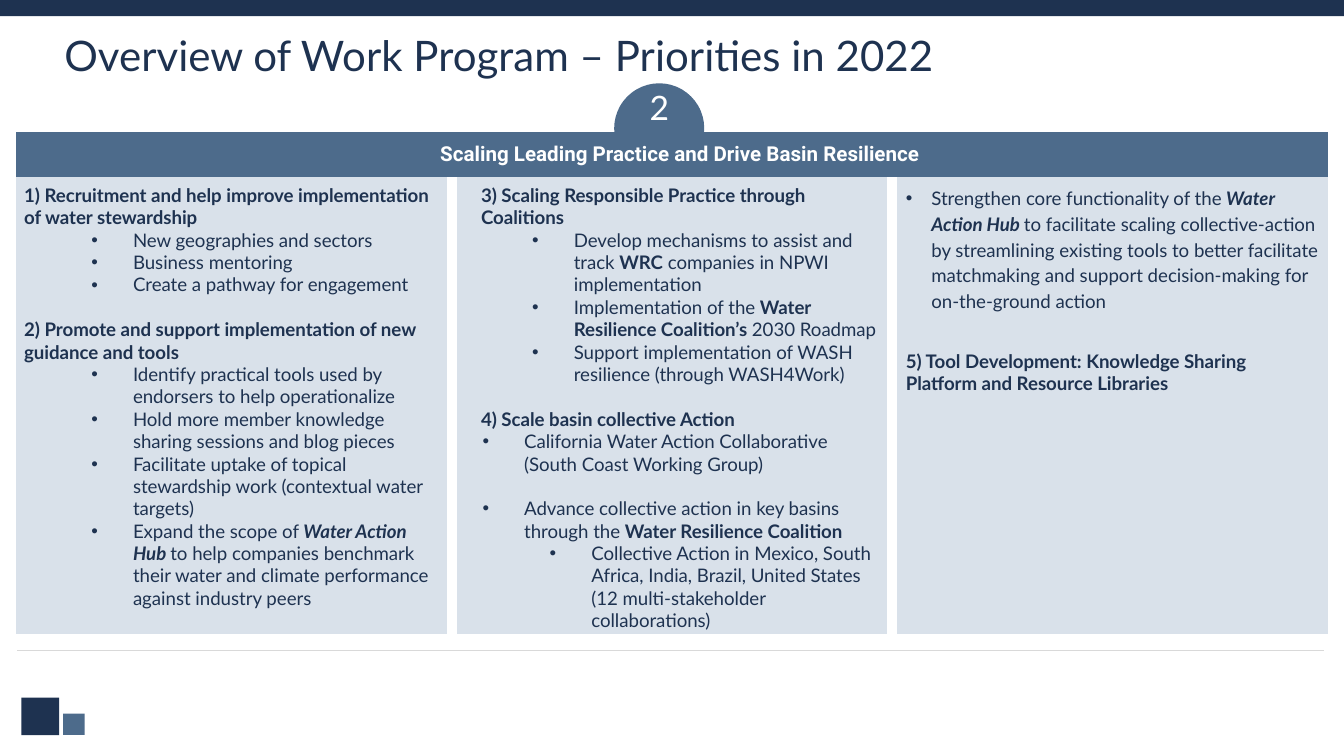
from lxml.etree import SubElement
from pptx import Presentation
from pptx.dml.color import RGBColor
from pptx.enum.shapes import MSO_CONNECTOR as CONN, MSO_SHAPE as SHAPE
from pptx.enum.text import MSO_ANCHOR as ANCHOR, MSO_AUTO_SIZE as AUTO, PP_ALIGN as ALIGN
from pptx.oxml.ns import qn
from pptx.util import Inches, Pt

W = 10
H = W * 9 / 16
COL, MARGIN = 3.28, 0.08
COLORS = {"navy": "1E3250", "steel": "4D6B8B", "pale": "D9E1EA", "grey": "D9D9D9", "white": "FFFFFF"}
NO_STYLE = "{2D5ABB26-0587-4C30-8999-92F81FD0307C}"

# kind: (level, left margin, first-line indent, line spacing)
KINDS = {
    "head": (0, 0, 0, 1),
    "inset head": (0, 0.12, 0, 1),
    "sub": (1, 0.81, -0.31, 1),
    "item": (0, 0.44, -0.31, 1),
    "deep": (1, 0.94, -0.31, 1),
    "loose": (0, 0.19, -0.19, 1.15),
}

# each entry: kind, text with *bold* and */bold italic* parts, space before
COLUMNS = [
    [
        ("head", "*1) Recruitment and help improve implementation of water stewardship*", 0),
        ("sub", "New geographies and sectors", 0),
        ("sub", "Business mentoring", 0),
        ("sub", "Create a pathway for engagement", 0),
        ("head", "*2) Promote and support implementation of new guidance and tools*", 12),
        ("sub", "Identify practical tools used by endorsers to help operationalize", 0),
        ("sub", "Hold more member knowledge sharing sessions and blog pieces", 0),
        ("sub", "Facilitate uptake of topical stewardship work (contextual water targets)", 0),
        ("sub", "Expand the scope of */Water Action Hub *to help companies benchmark "
                "their water and climate performance against industry peers", 0),
    ],
    [
        ("inset head", "*3) Scaling Responsible Practice through Coalitions*", 0),
        ("sub", "Develop mechanisms to assist and track *WRC* companies in NPWI implementation", 0),
        ("sub", "Implementation of the *Water Resilience Coalition’s* 2030 Roadmap", 0),
        ("sub", "Support implementation of WASH resilience (through WASH4Work)", 0),
        ("inset head", "*4) Scale basin collective Action*", 12),
        ("item", "California Water Action Collaborative (South Coast Working Group)", 0),
        ("item", "Advance collective action in key basins through the *Water Resilience Coalition*", 12),
        ("deep", "Collective Action in Mexico, South Africa, India, Brazil, United States "
                 "(12 multi-stakeholder collaborations)", 0),
    ],
    [
        ("loose", "Strengthen core functionality of the */Water Action Hub *to facilitate scaling "
                  "collective-action by streamlining existing tools to better facilitate matchmaking "
                  "and support decision-making for on-the-ground action", 0),
        ("head", "*5) Tool Development: Knowledge Sharing Platform and Resource Libraries*", 20),
    ],
]


def rgb(name):
    """Return the named colour."""
    return RGBColor.from_string(COLORS[name])


def set_font(p, size, color, name="Lato", bold=None):
    """Set the font of a whole paragraph."""
    f = p.font
    f.size, f.name, f.bold = Pt(size), name, bold
    f.color.rgb = rgb(color)


def add_block(s, kind, x, y, w, h, color):
    """Add a plain filled shape."""
    sp = s.shapes.add_shape(kind, *map(Inches, (x, y, w, h)))
    sp.shadow.inherit = False
    sp.fill.solid()
    sp.fill.fore_color.rgb = rgb(color)
    sp.line.fill.background()


def add_text(s, x, y, w, h, text, size, color, wrap=True, align=ALIGN.LEFT, spacing=1.0):
    """Add a text box with one paragraph."""
    tf = s.shapes.add_textbox(*map(Inches, (x, y, w, h))).text_frame
    tf.word_wrap = wrap
    tf.auto_size = AUTO.NONE if wrap else AUTO.SHAPE_TO_FIT_TEXT
    p = tf.paragraphs[0]
    p.text, p.alignment, p.line_spacing = text, align, spacing
    set_font(p, size, color)


def add_rule(s, x1, x2, y):
    """Add a thin horizontal line."""
    c = s.shapes.add_connector(CONN.STRAIGHT, *map(Inches, (x1, y, x2, y)))
    c.line.color.rgb = rgb("grey")
    c.line.width = Pt(0.75)
    SubElement(c._element.spPr, qn("a:effectLst"))


def style_cell(cell, color, sides):
    """Give a cell white borders on some sides and a fill."""
    tc_pr = cell._tc.get_or_add_tcPr()
    for side in sides:
        ln = SubElement(tc_pr, qn(f"a:ln{side}"), w=str(Pt(6)))
        fill = SubElement(ln, qn("a:solidFill"))
        SubElement(fill, qn("a:srgbClr"), val=COLORS["white"])
    cell.fill.solid()
    cell.fill.fore_color.rgb = rgb(color)


def set_indent(p, left, first=0, bullet=False):
    """Set a paragraph's indents and bullet."""
    p_pr = p._p.get_or_add_pPr()
    p_pr.set("marL", str(Inches(left)))
    p_pr.set("indent", str(Inches(first)))
    if bullet:
        SubElement(p_pr, qn("a:buFont"), typeface="Arial")
        SubElement(p_pr, qn("a:buChar"), char="•")


def fill_paragraph(p, kind, text, before):
    """Write one list entry with its emphasised parts."""
    p.level, left, first, spacing = KINDS[kind]
    p.line_spacing = spacing
    if before:
        p.space_before = Pt(before)
    set_indent(p, left, first, bullet=first < 0)
    set_font(p, 10, "navy")
    for i, part in enumerate(text.split("*")):
        if part:
            r = p.add_run()
            r.text = part.removeprefix("/")
            r.font.bold = i % 2 == 1
            r.font.italic = part.startswith("/")


def add_priorities(s, title, columns):
    """Add the table: a merged header over one cell per column."""
    n = len(columns)
    frame = s.shapes.add_table(2, n, *map(Inches, (MARGIN, 0.98, n * COL, 3.65)))
    table = frame.table
    table.first_row = table.horz_banding = False
    table._tbl.tblPr.find(qn("a:tableStyleId")).text = NO_STYLE
    for row, height in zip(table.rows, (0.34, 3.31)):
        row.height = Inches(height)
    for col in table.columns:
        col.width = Inches(COL)

    head = table.cell(0, 0)
    head.merge(table.cell(0, n - 1))
    head.vertical_anchor = ANCHOR.MIDDLE
    head.margin_left = head.margin_right = Inches(0.02)
    head.margin_top = head.margin_bottom = 0
    p = head.text_frame.paragraphs[0]
    p.text, p.alignment = title, ALIGN.CENTER
    set_indent(p, 0.12)
    set_font(p, 11, "white", "Roboto", True)
    style_cell(head, "steel", "LR")

    for i, entries in enumerate(columns):
        cell = table.cell(1, i)
        style_cell(cell, "pale", "LRB")
        tf = cell.text_frame
        for j, entry in enumerate(entries):
            fill_paragraph(tf.add_paragraph() if j else tf.paragraphs[0], *entry)


def main():
    """Build the slide."""
    prs = Presentation()
    prs.slide_width, prs.slide_height = Inches(W), Inches(H)
    s = prs.slides.add_slide(prs.slide_layouts[6])
    add_block(s, SHAPE.RECTANGLE, 0.16, 5.19, 0.28, 0.28, "navy")
    add_block(s, SHAPE.RECTANGLE, 0.47, 5.31, 0.16, 0.16, "steel")
    add_block(s, SHAPE.RECTANGLE, 0, 0, W, 0.12, "navy")
    add_text(s, 0.38, 0.21, 9.05, 0.5, "Overview of Work Program – Priorities in 2022",
             22.5, "navy", spacing=0.9)
    add_block(s, SHAPE.OVAL, 4.57, 0.62, 0.67, 0.67, "steel")
    add_text(s, 4.73, 0.6, 0.35, 0.4, "2", 18, "white", wrap=False, align=ALIGN.CENTER)
    add_rule(s, 0.13, 9.85, 4.84)
    add_priorities(s, "Scaling Leading Practice and Drive Basin Resilience", COLUMNS)
    prs.save("out.pptx")


if __name__ == "__main__":
    main()
